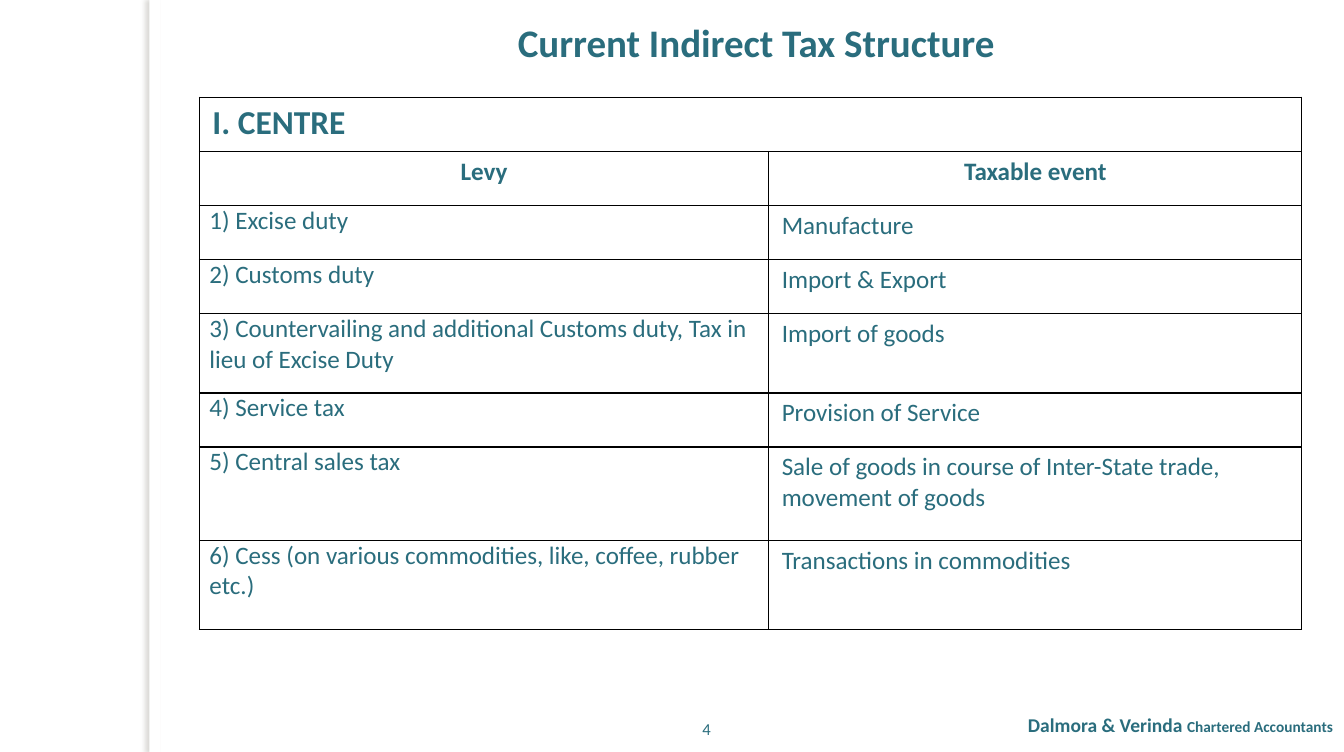
from lxml.etree import SubElement
from pptx import Presentation
from pptx.dml.color import RGBColor
from pptx.enum.shapes import MSO_SHAPE
from pptx.enum.text import MSO_ANCHOR, MSO_AUTO_SIZE, PP_ALIGN
from pptx.oxml.ns import qn
from pptx.util import Inches, Pt

TEAL = RGBColor(0x2A, 0x6D, 0x7D)
WHITE = RGBColor(0xFF, 0xFF, 0xFF)
BLACK = RGBColor(0x00, 0x00, 0x00)
SHADOW = RGBColor(0x73, 0x6F, 0x63)
FONT = "Calibri"

SECTION = "I. CENTRE"
HEADINGS = ("Levy", "Taxable event")
LEVIES = [
    ("1) Excise duty", "Manufacture"),
    ("2) Customs duty", "Import & Export"),
    ("3) Countervailing and additional Customs duty, Tax in lieu of Excise Duty",
     "Import of goods"),
    ("4) Service tax", "Provision of Service"),
    ("5) Central sales tax",
     "Sale of goods in course of Inter-State trade, movement of goods"),
    ("6) Cess (on various commodities, like, coffee, rubber etc.)",
     "Transactions in commodities"),
]
COLUMN_WIDTHS = (5.68, 5.32)
ROW_HEIGHTS = (0.54, 0.54, 0.54, 0.54, 0.79, 0.54, 0.93, 0.89)
WIDE_MARGINS = (0.13, 0.05)
LEVY_MARGINS = (0.1, 0)


def set_font(font, size, bold=False):
    font.name = FONT
    font.size = Pt(size)
    font.bold = bold
    font.color.rgb = TEAL


def add_edge_strip(slide):
    sp = slide.shapes.add_shape(MSO_SHAPE.RECTANGLE, Inches(1.49), 0,
                                Inches(0.11), Inches(7.5))
    sp.fill.solid()
    sp.fill.fore_color.rgb = WHITE
    sp.line.fill.background()
    sp.shadow.inherit = False
    effects = sp.element.spPr.find(qn("a:effectLst"))
    shadow = SubElement(effects, qn("a:outerShdw"), blurRad=str(Pt(3)),
                        dist=str(Pt(3)), dir=str(180 * 60000))
    color = SubElement(shadow, qn("a:srgbClr"), val=str(SHADOW))
    SubElement(color, qn("a:alpha"), val="25000")


def set_borders(cell):
    tc_pr = cell._tc.get_or_add_tcPr()
    for side in ("a:lnL", "a:lnR", "a:lnT", "a:lnB"):
        line = SubElement(tc_pr, qn(side), w=str(Pt(1)))
        fill = SubElement(line, qn("a:solidFill"))
        SubElement(fill, qn("a:srgbClr"), val=str(BLACK))


def fill_cell(cell, text, size=18, bold=False, align=PP_ALIGN.LEFT,
              margins=WIDE_MARGINS):
    cell.margin_left = cell.margin_right = Inches(margins[0])
    cell.margin_top = cell.margin_bottom = Inches(margins[1])
    p = cell.text_frame.paragraphs[0]
    p.text = text
    p.alignment = align
    set_font(p.font, size, bold)


def add_tax_table(slide):
    table = slide.shapes.add_table(
        len(ROW_HEIGHTS), len(COLUMN_WIDTHS), Inches(1.99), Inches(0.97),
        Inches(sum(COLUMN_WIDTHS)), Inches(sum(ROW_HEIGHTS))).table
    table.first_row = False
    table.horz_banding = False
    for column, width in zip(table.columns, COLUMN_WIDTHS):
        column.width = Inches(width)
    for row, height in zip(table.rows, ROW_HEIGHTS):
        row.height = Inches(height)
    for cell in table.iter_cells():
        set_borders(cell)
        cell.fill.background()
    table.cell(0, 0).merge(table.cell(0, 1))
    fill_cell(table.cell(0, 0), SECTION, size=24, bold=True)
    for col, heading in enumerate(HEADINGS):
        fill_cell(table.cell(1, col), heading, bold=True, align=PP_ALIGN.CENTER)
    for row, (levy, event) in enumerate(LEVIES, start=2):
        fill_cell(table.cell(row, 0), levy, margins=LEVY_MARGINS)
        fill_cell(table.cell(row, 1), event)


def set_title(slide, text):
    title = slide.shapes.title
    title.left, title.top = Inches(1.68), Inches(0.13)
    title.width, title.height = Inches(11.73), Inches(0.57)
    tf = title.text_frame
    tf.auto_size = MSO_AUTO_SIZE.NONE
    tf.vertical_anchor = MSO_ANCHOR.TOP
    p = tf.paragraphs[0]
    p.text = text
    p.alignment = PP_ALIGN.CENTER
    set_font(p.font, 28, bold=True)


def add_footer(slide, left, top, width, height, align, runs):
    tf = slide.shapes.add_textbox(Inches(left), Inches(top),
                                  Inches(width), Inches(height)).text_frame
    tf.word_wrap = True
    p = tf.paragraphs[0]
    p.alignment = align
    for text, size, bold in runs:
        r = p.add_run()
        r.text = text
        set_font(r.font, size, bold)


def main():
    prs = Presentation()
    prs.slide_width, prs.slide_height = Inches(13.41), Inches(7.5)
    slide = prs.slides.add_slide(prs.slide_layouts[5])
    add_edge_strip(slide)
    add_tax_table(slide)
    set_title(slide, "Current Indirect Tax Structure")
    add_footer(slide, 6.7, 7.06, 6.7, 0.54, PP_ALIGN.RIGHT,
               [("Dalmora & Verinda ", 14, True),
                ("Chartered Accountants", 11, True)])
    add_footer(slide, 6.7, 7.12, 0.7, 0.3, PP_ALIGN.CENTER, [("4", 12, False)])
    prs.save("out.pptx")


if __name__ == "__main__":
    main()
